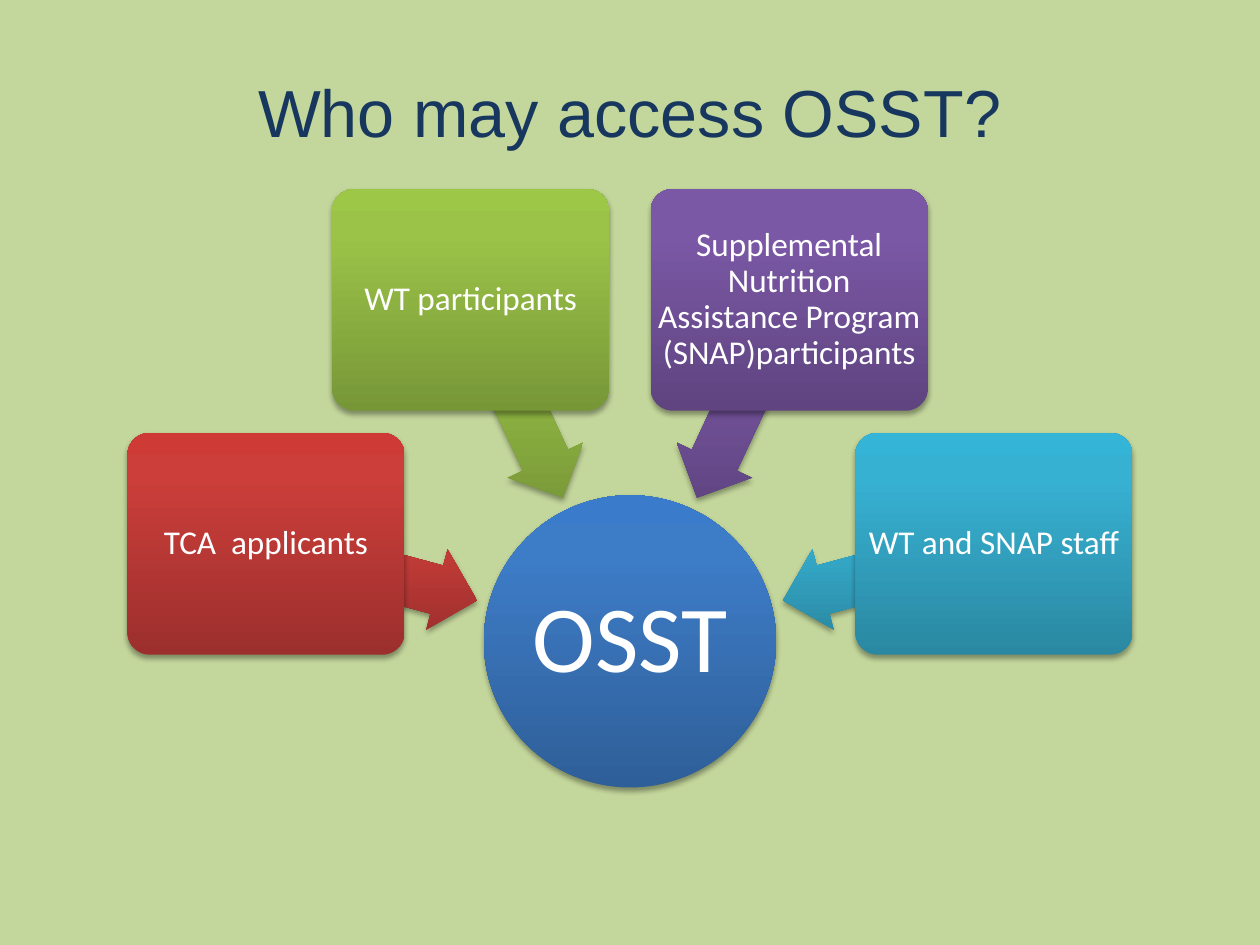
from math import cos, radians, sin

from lxml.etree import SubElement as Sub
from pptx import Presentation
from pptx.dml.color import RGBColor as Rgb
from pptx.enum.shapes import MSO_SHAPE as Kind
from pptx.enum.text import MSO_ANCHOR as Anchor, PP_ALIGN as Align
from pptx.oxml.ns import qn
from pptx.util import Pt

COLORS = {"back": "C3D69B", "title": "17375E", "text": "FFFFFF", "shadow": "000000"}
# Gradient stops from bottom to top
GRADS = {
    "blue": ("2F5F99", "3D7CC7", "3A7CCB"),
    "red": ("9C2F2D", "CB3E3A", "CE3B37"),
    "green": ("779737", "9BC348", "9DC746"),
    "purple": ("5F4480", "7B58A6", "7C57A8"),
    "teal": ("2A88A2", "37B1D2", "34B4D6"),
}
STOPS = (0, 80000, 100000)

HUB = (360, 366.5)
HUB_SIZE = (167, 167)
BOX_SIZE = (158.4, 126.72)
ARROW_SIZE = (124.6, 47.5)
ARROW_DIST, BOX_DIST = 152.8, 215.3
FIRST, STEP = 195, 50

GROUPS = (
    ("TCA  applicants", "red"),
    ("WT participants", "green"),
    ("Supplemental Nutrition Assistance Program (SNAP)participants", "purple"),
    ("WT and SNAP staff", "teal"),
)


def style(shape, grad):
    """Give a shape its vertical gradient, soft shadow and no outline."""
    shape.line.fill.background()
    shape.fill.gradient()
    props = shape._element.spPr
    fill = props.find(qn("a:gradFill"))
    fill.set("rotWithShape", "0")
    for child in list(fill):
        fill.remove(child)
    stops = Sub(fill, qn("a:gsLst"))
    for pos, color in zip(STOPS, GRADS[grad]):
        stop = Sub(stops, qn("a:gs"), pos=str(pos))
        Sub(stop, qn("a:srgbClr"), val=color)
    Sub(fill, qn("a:lin"), ang="16200000", scaled="0")

    shape.shadow.inherit = False
    shade = Sub(props.find(qn("a:effectLst")), qn("a:outerShdw"),
                blurRad=str(Pt(3.1)), dist=str(Pt(1.8)), dir="5400000", rotWithShape="0")
    tint = Sub(shade, qn("a:srgbClr"), val=COLORS["shadow"])
    Sub(tint, qn("a:alpha"), val="35000")


def add_part(shapes, kind, mid, size, grad):
    """Add a styled shape centred on a point."""
    (x, y), (w, h) = mid, size
    shape = shapes.add_shape(kind, Pt(x - w / 2), Pt(y - h / 2), Pt(w), Pt(h))
    style(shape, grad)
    return shape


def write(shape, text, size, font, color):
    frame = shape.text_frame
    frame.text = text
    form = {"word_wrap": True, "vertical_anchor": Anchor.MIDDLE, "margin_left": 0,
            "margin_right": 0, "margin_top": 0, "margin_bottom": 0}
    for name, value in form.items():
        setattr(frame, name, value)
    para = frame.paragraphs[0]
    para.alignment = Align.CENTER
    para.line_spacing = 0.9
    face = para.runs[0].font
    for name, value in {"name": font, "size": Pt(size)}.items():
        setattr(face, name, value)
    face.color.rgb = Rgb.from_string(COLORS[color])


def around(angle, dist):
    """Find the point at an angle and distance from the hub."""
    turn = radians(angle)
    return HUB[0] + dist * cos(turn), HUB[1] + dist * sin(turn)


def add_title(slide, text):
    title = slide.shapes.title
    place = {"left": 36, "top": 30.24, "width": 648, "height": 66.24}
    for name, value in place.items():
        setattr(title, name, Pt(value))
    write(title, text, 38, "Arial", "title")
    title.text_frame.paragraphs[0].line_spacing = 1.0


def add_hub(shapes):
    hub = add_part(shapes, Kind.OVAL, HUB, HUB_SIZE, "blue")
    write(hub, "OSST", 54, "Calibri", "text")


def add_spoke(shapes, angle, text, grad):
    """Add a box with its arrow pointing to the hub."""
    arrow = add_part(shapes, Kind.LEFT_ARROW, around(angle, ARROW_DIST), ARROW_SIZE, grad)
    arrow.rotation = angle
    arrow.adjustments[0] = 0.6
    arrow.adjustments[1] = 0.5
    box = add_part(shapes, Kind.ROUNDED_RECTANGLE, around(angle, BOX_DIST), BOX_SIZE, grad)
    box.adjustments[0] = 0.1
    write(box, text, 19, "Calibri", "text")


def main():
    deck = Presentation()
    deck.slide_width, deck.slide_height = Pt(720), Pt(540)
    slide = deck.slides.add_slide(deck.slide_layouts[5])
    back = slide.background.fill
    back.solid()
    back.fore_color.rgb = Rgb.from_string(COLORS["back"])

    add_title(slide, "Who may access OSST?")
    shapes = slide.shapes.add_group_shape().shapes
    add_hub(shapes)
    for i, (text, grad) in enumerate(GROUPS):
        add_spoke(shapes, FIRST + i * STEP, text, grad)
    deck.save("out.pptx")


if __name__ == "__main__":
    main()
